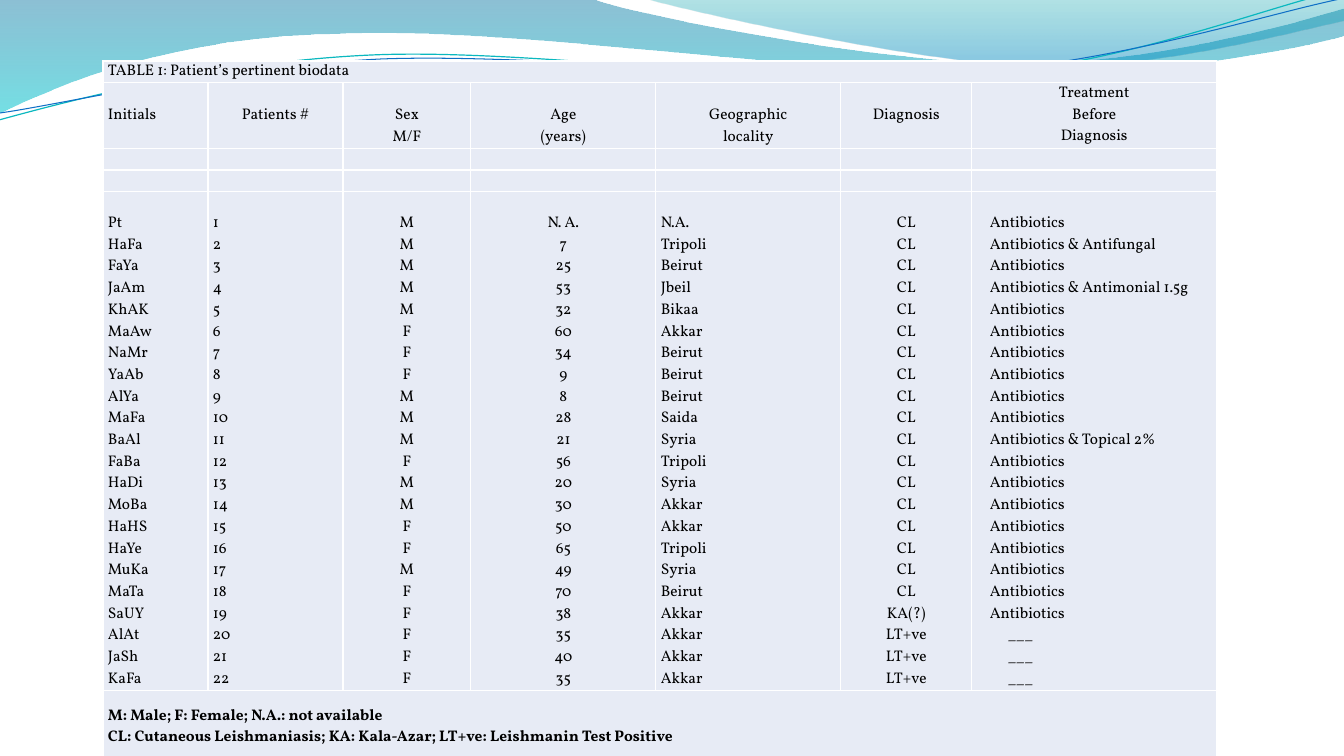
from lxml import etree
from pptx import Presentation
from pptx import util as u
from pptx.dml.color import RGBColor
from pptx.enum import text
from pptx.oxml import parse_xml
from pptx.oxml.ns import nsdecls, qn

PX = 914400 / 100.8
LINE = 22  # height of one text line in px
LEFT, CENTER = text.PP_ALIGN.LEFT, text.PP_ALIGN.CENTER


def wave(points, closed):
    """Draw a start point followed by lines (x, y) and cubic curves (6 numbers)."""
    start, *segments = points
    vertices = [seg[i:i + 2] for seg in segments for i in range(0, len(seg), 2)]
    builder = s.shapes.build_freeform(*start, scale=PX)
    builder.add_line_segments(vertices, close=closed)
    sp = builder.convert_to_shape()
    sp.shadow.inherit = False
    steps = iter(list(sp._element.iter(qn("a:lnTo"))))
    for seg in segments:
        step = next(steps)
        if len(seg) == 6:
            step.tag = qn("a:cubicBezTo")
            for control in (next(steps), next(steps)):
                step.append(control[0])
                control.getparent().remove(control)
    return sp


def write(cell, lines, size=11, bold=False, align=LEFT, top=0, indents=()):
    cell.margin_left = cell.margin_right = u.Emu(round(5 * PX))
    cell.margin_top, cell.margin_bottom = u.Emu(round(top * PX)), 0
    for side in ("L", "R", "T", "B"):
        cell._tc.get_or_add_tcPr().append(parse_xml(
            f'<a:ln{side} w="12700" {nsdecls("a")}><a:solidFill>'
            f'<a:srgbClr val="FFFFFF"/></a:solidFill></a:ln{side}>'))
    cell.fill.solid()
    cell.fill.fore_color.rgb = RGBColor.from_string("E7EBF5")
    tf = cell.text_frame
    for i, line in enumerate(lines):
        p = tf.add_paragraph() if i else tf.paragraphs[0]
        p.alignment = align
        if indents:
            p._p.get_or_add_pPr().set("marL", str(round(indents[i] * PX)))
        r = p.add_run()
        r.text = line
        r.font.name, r.font.size, r.font.bold = "Vollkorn", u.Pt(size), bold
        r.font.color.rgb = RGBColor.from_string("000000")
    if not lines:
        end = etree.SubElement(tf.paragraphs[0]._p, qn("a:endParaRPr"), sz=str(size * 100))
        etree.SubElement(end, qn("a:latin"), typeface="Vollkorn")


prs = Presentation()
prs.slide_width, prs.slide_height = u.Emu(round(1344 * PX)), u.Emu(round(756 * PX))
s = prs.slides.add_slide(prs.slide_layouts[6])

# Header waves: outline, then gradient stops (position, colour, opacity %)
bands = [
    ([(0, 0), (592, -1), (639, 17, 892, 64, 1019, 64), (1148, 64, 1288, 26, 1344, 9),
      (1346, 36), (1321, 44, 1169, 77, 1002, 76), (836, 76, 513, 28, 346, 34),
      (173, 36, 61, 84, -1, 114)],
     [(0, "0074A1", 45), (1, "00C6CF", 55)]),
    ([(644, -1), (684, 11, 916, 62, 1033, 66), (1150, 70, 1292, 32, 1344, 21), (1344, 0)],
     [(0, "00A1A9", 30), (0.8, "008BBF", 45)]),
]
for points, stops in bands:
    sp = wave(points, True)
    sp.line.fill.background()
    sp.fill.gradient()
    sp.fill.gradient_angle = 270
    for stop, (position, colour, opacity) in zip(sp.fill.gradient_stops, stops):
        stop.position = position
        stop.color.rgb = RGBColor.from_string(colour)
    for clr, (_, _, opacity) in zip(sp._element.spPr.iter(qn("a:srgbClr")), stops):
        etree.SubElement(clr, qn("a:alpha"), val=str(opacity * 1000))

strands = [
    ([(-1, 120), (65, 102, 213, 62, 372, 55), (531, 48, 796, 88, 958, 77),
      (1119, 67, 1262, 8, 1342, -10)], "0AB8BF", 0.85),
    ([(0, 113), (64, 104, 220, 67, 381, 59), (541, 53, 802, 83, 963, 73),
      (1123, 62, 1265, 14, 1345, -2)], "0F6FC6", 0.75),
]
for points, colour, width in strands:
    sp = wave(points, False)
    sp.fill.background()
    sp.line.color.rgb = RGBColor.from_string(colour)
    sp.line.width = u.Pt(width)

# Initials, sex, age, locality, diagnosis, treatment
AB = "Antibiotics"
patients = [
    ("Pt", "M", "N. A.", "N.A.", "CL", AB),
    ("HaFa", "M", "7", "Tripoli", "CL", AB + " & Antifungal"),
    ("FaYa", "M", "25", "Beirut", "CL", AB),
    ("JaAm", "M", "53", "Jbeil", "CL", AB + " & Antimonial 1.5g"),
    ("KhAK", "M", "32", "Bikaa", "CL", AB),
    ("MaAw", "F", "60", "Akkar", "CL", AB),
    ("NaMr", "F", "34", "Beirut", "CL", AB),
    ("YaAb", "F", "9", "Beirut", "CL", AB),
    ("AlYa", "M", "8", "Beirut", "CL", AB),
    ("MaFa", "M", "28", "Saida", "CL", AB),
    ("BaAl", "M", "21", "Syria", "CL", AB + " & Topical 2%"),
    ("FaBa", "F", "56", "Tripoli", "CL", AB),
    ("HaDi", "M", "20", "Syria", "CL", AB),
    ("MoBa", "M", "30", "Akkar", "CL", AB),
    ("HaHS", "F", "50", "Akkar", "CL", AB),
    ("HaYe", "F", "65", "Tripoli", "CL", AB),
    ("MuKa", "M", "49", "Syria", "CL", AB),
    ("MaTa", "F", "70", "Beirut", "CL", AB),
    ("SaUY", "F", "38", "Akkar", "KA(?)", AB),
    ("AlAt", "F", "35", "Akkar", "LT+ve", "___"),
    ("JaSh", "F", "40", "Akkar", "LT+ve", "___"),
    ("KaFa", "F", "35", "Akkar", "LT+ve", "___"),
]
initials, *details = zip(*patients)
numbers = [str(n) for n in range(1, len(patients) + 1)]
treatment_indents = [31 if row[-1] == "___" else 13 for row in patients]

# Column: width, heading, heading alignment, values alignment
headings = [
    (105, ["Initials"], LEFT, LEFT),
    (135, ["Patients #"], CENTER, LEFT),
    (128, ["Sex", "M/F"], CENTER, CENTER),
    (185, ["Age", "(years)"], CENTER, CENTER),
    (185, ["Geographic", "locality"], CENTER, LEFT),
    (131, ["Diagnosis"], CENTER, CENTER),
    (245, ["Treatment", "Before", "Diagnosis"], CENTER, LEFT),
]
# Rows grow to fit their text
heights = [16, 49, 16, 16, 376, 100]
frame = s.shapes.add_table(len(heights), len(headings), *(
    u.Emu(round(n * PX)) for n in (103, 61, 1114, sum(heights))))
table = frame.table
table.first_row = table.horz_banding = False
for row, height in zip(table.rows, heights):
    row.height = u.Emu(round(height * PX))

for c, ((width, heading, head_align, align), values) in enumerate(
        zip(headings, [initials, numbers, *details])):
    table.columns[c].width = u.Emu(round(width * PX))
    write(table.cell(1, c), heading, align=head_align, top=0 if len(heading) == 3 else LINE)
    for blank in (2, 3):
        write(table.cell(blank, c), [])
    write(table.cell(4, c), values, align=align, top=LINE - 1,
          indents=treatment_indents if c == len(headings) - 1 else ())

last = len(headings) - 1
for r in (0, 5):
    table.cell(r, 0).merge(table.cell(r, last))
write(table.cell(0, 0), ["TABLE 1: Patient’s pertinent biodata"])
write(table.cell(5, 0), [
    "M: Male; F: Female; N.A.: not available",
    "CL: Cutaneous Leishmaniasis; KA: Kala-Azar; LT+ve: Leishmanin Test Positive",
], bold=True, top=15)

prs.save("out.pptx")
